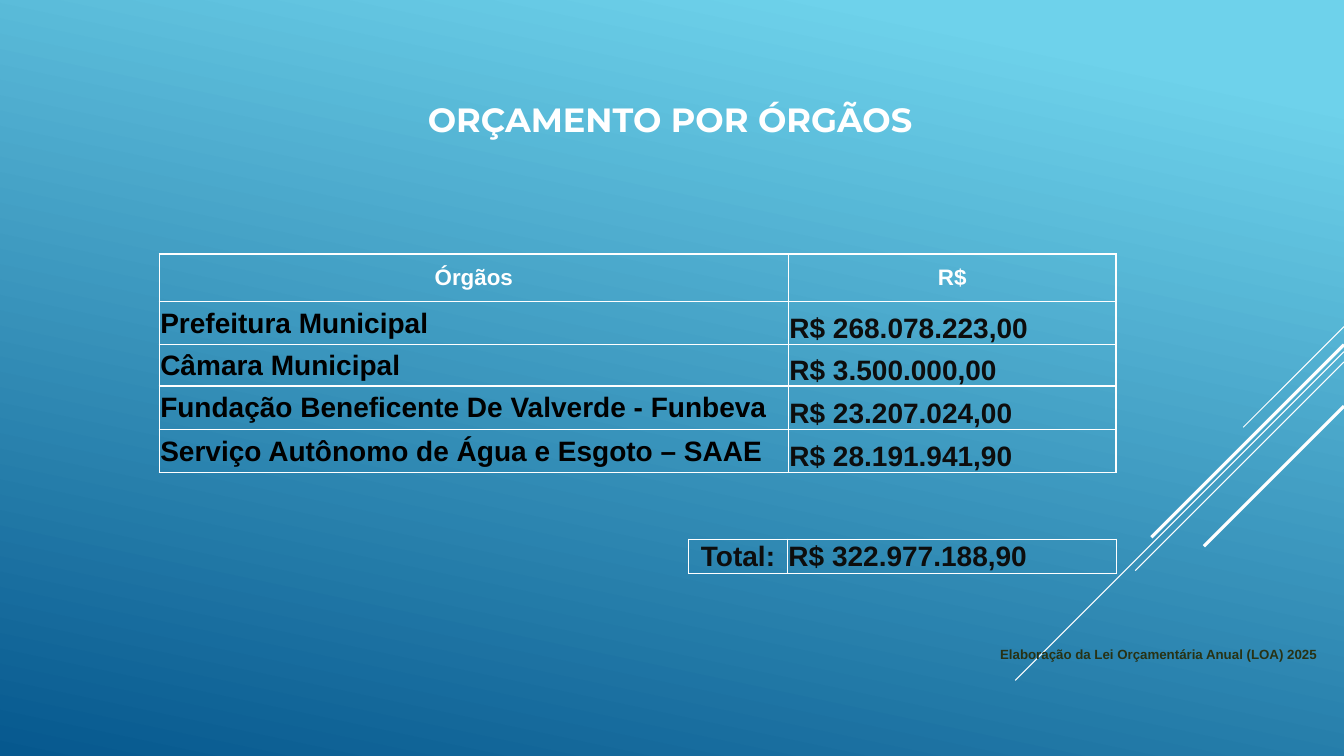
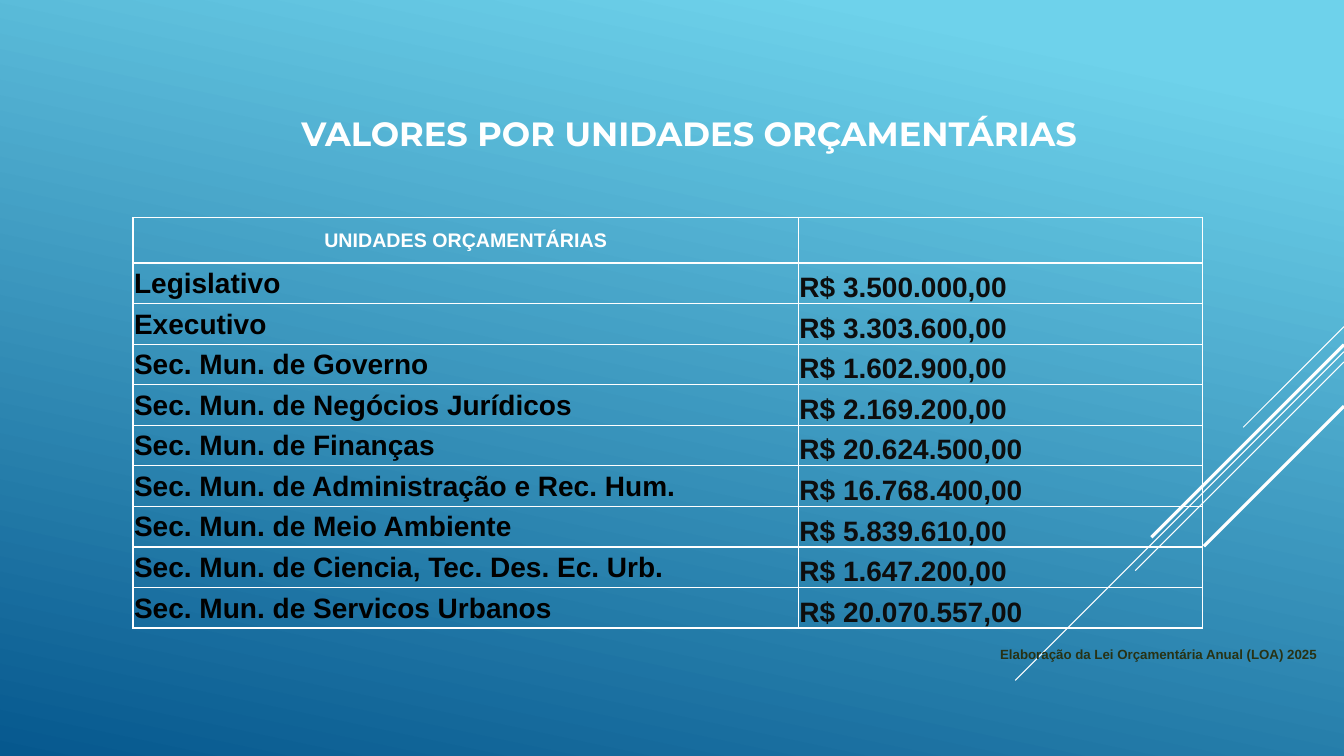
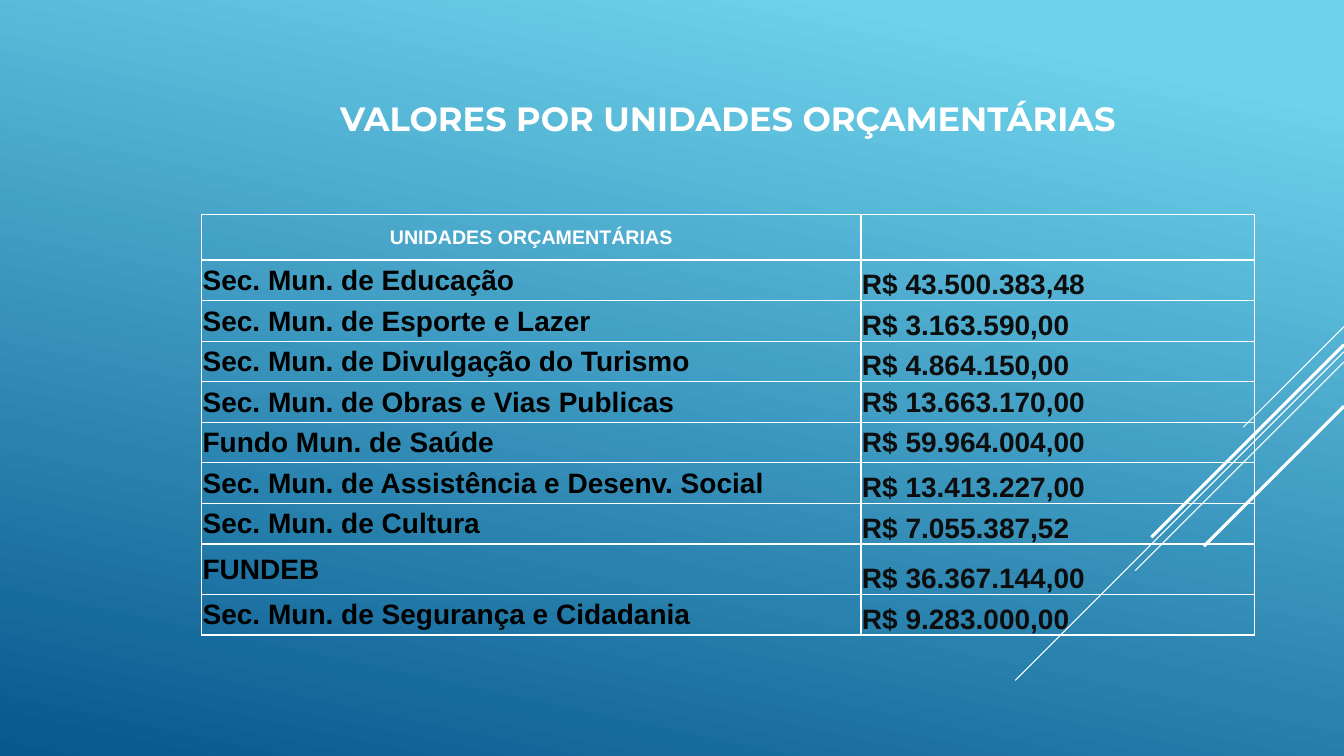
from lxml.etree import SubElement as Sub
from pptx import Presentation as Deck
from pptx.dml.color import RGBColor as Rgb
from pptx.enum.shapes import MSO_CONNECTOR as Link
from pptx.enum.text import MSO_ANCHOR as Anchor, PP_ALIGN as Align
from pptx.oxml.ns import qn
from pptx.util import Inches, Pt

WIDE, HIGH = Inches(13.33), Inches(7.5)
WHITE, BLACK, INK, OLIVE = "FFFFFF", "000000", "0D0D0D", "283214"
SKY, NAVY = "6ED2EB", "06588E"
MID, LOW = Anchor.MIDDLE, Anchor.BOTTOM

TITLE = dict(size=24, name="Montserrat", hue=WHITE, align=Align.CENTER, anchor=MID)
FOOT = dict(size=9.5, name="Arial", hue=OLIVE, align=Align.RIGHT, anchor=Anchor.TOP)
HEAD = dict(size=16, name="Arial", hue=WHITE, align=Align.CENTER, anchor=MID)
LABEL = dict(HEAD, size=20, hue=BLACK, align=Align.LEFT)
VALUE = dict(LABEL, hue=INK, anchor=LOW)
LEVEL = dict(VALUE, anchor=MID)
TOTAL = dict(LEVEL, align=Align.CENTER)
SMALL = dict(HEAD, size=14)

RAYS = [(43.2, 13.33, 0.75), (46.53, 43.47, 0.75), (47.87, 27.6, 0.75),
        (45.6, 25.47, 2.25), (53.73, 18.53, 2.25)]
UNITS = "VALORES POR UNIDADES ORÇAMENTÁRIAS"
UNIT_HEAD = [("UNIDADES ORÇAMENTÁRIAS", SMALL), ("", SMALL)]
ROW = 5.37

BODIES = [
    ("Prefeitura Municipal", "R$ 268.078.223,00"),
    ("Câmara Municipal", "R$ 3.500.000,00"),
    ("Fundação Beneficente De Valverde - Funbeva", "R$ 23.207.024,00"),
    ("Serviço Autônomo de Água e Esgoto – SAAE", "R$ 28.191.941,90"),
]
FIRST = [
    ("Legislativo", "R$ 3.500.000,00"),
    ("Executivo", "R$ 3.303.600,00"),
    ("Sec. Mun. de Governo", "R$ 1.602.900,00"),
    ("Sec. Mun. de Negócios Jurídicos", "R$ 2.169.200,00"),
    ("Sec. Mun. de Finanças", "R$ 20.624.500,00"),
    ("Sec. Mun. de Administração e Rec. Hum.", "R$ 16.768.400,00"),
    ("Sec. Mun. de Meio Ambiente", "R$ 5.839.610,00"),
    ("Sec. Mun. de Ciencia, Tec. Des. Ec. Urb.", "R$ 1.647.200,00"),
    ("Sec. Mun. de Servicos Urbanos", "R$ 20.070.557,00"),
]
SECOND = [
    ("Sec. Mun. de Educação", "R$ 43.500.383,48"),
    ("Sec. Mun. de Esporte e Lazer", "R$ 3.163.590,00"),
    ("Sec. Mun. de Divulgação do Turismo", "R$ 4.864.150,00"),
    ("Sec. Mun. de Obras e Vias Publicas", "R$ 13.663.170,00", LEVEL),
    ("Fundo Mun. de Saúde", "R$ 59.964.004,00", LEVEL),
    ("Sec. Mun. de Assistência e Desenv. Social", "R$ 13.413.227,00"),
    ("Sec. Mun. de Cultura", "R$ 7.055.387,52"),
    ("FUNDEB", "R$ 36.367.144,00"),
    ("Sec. Mun. de Segurança e Cidadania", "R$ 9.283.000,00"),
]


def across(share):
    """Turn a percentage of the slide's width into a length."""
    return round(WIDE * share / 100)


def down(share):
    """Turn a percentage of the slide's height into a length."""
    return round(HIGH * share / 100)


def paint(color, code):
    """Give a colour format its hex value."""
    color.rgb = Rgb.from_string(code)


def assign(item, values):
    """Set attributes from a dict."""
    for key, value in values.items():
        setattr(item, key, value)


def write(frame, text, look):
    """Put one styled paragraph in a text frame."""
    par = frame.paragraphs[0]
    par.alignment = look["align"]
    run = par.add_run()
    run.text = text
    assign(run.font, dict(size=Pt(look["size"]), name=look["name"], bold=True))
    paint(run.font.color, look["hue"])


def label(slide, text, box, look):
    """Add a text box placed by shares of the slide."""
    left, top, width, height = box
    shape = slide.shapes.add_textbox(across(left), down(top), across(width), down(height))
    assign(shape.text_frame, dict(word_wrap=True, vertical_anchor=look["anchor"]))
    write(shape.text_frame, text, look)


def ray(slide, top, drop, weight):
    """Draw a diagonal from the right edge down to the left."""
    line = slide.shapes.add_connector(
        Link.STRAIGHT, WIDE, down(top), WIDE - down(drop), down(top + drop))
    line.line.width = Pt(weight)
    paint(line.line.color, WHITE)
    Sub(line._element.spPr, qn("a:effectLst"))


def border(cell):
    """Outline a cell with thin white lines."""
    props = cell._tc.get_or_add_tcPr()
    for side in "LRTB":
        edge = Sub(props, qn(f"a:ln{side}"), w=str(Pt(1)))
        Sub(Sub(edge, qn("a:solidFill")), qn("a:srgbClr"), val=WHITE)


def fill_cell(cell, text, look):
    """Style one cell and write its text."""
    border(cell)
    cell.fill.background()
    thin = Inches(0.01)
    assign(cell, dict(margin_left=thin, margin_right=thin, margin_top=thin,
                      margin_bottom=0, vertical_anchor=look["anchor"]))
    if text:
        write(cell.text_frame, text, look)


def grid(slide, spot, cols, rows, cells):
    """Add a clear table with white rules."""
    left, top = spot
    table = slide.shapes.add_table(
        len(rows), len(cols), across(left), down(top),
        across(sum(cols)), down(sum(rows))).table
    assign(table, dict(first_row=False, horz_banding=False))
    for col, width in zip(table.columns, cols):
        col.width = across(width)
    for row, height, line in zip(table.rows, rows, cells):
        row.height = down(height)
        for cell, (text, look) in zip(row.cells, line):
            fill_cell(cell, text, look)


def body(pairs):
    """Pair each label and amount with its style."""
    return [[(name, LABEL), (sum_, *(look or [VALUE]))] for name, sum_, *look in pairs]


def backdrop(deck):
    """Give the master its sky gradient."""
    fill = deck.slide_master.background.fill
    fill.gradient()
    fill.gradient_angle = 258
    for stop, place, code in zip(fill.gradient_stops, (0.1, 1), (SKY, NAVY)):
        stop.position = place
        paint(stop.color, code)


def page(deck, title, box, foot=True):
    """Start a slide with rays, title and footer."""
    slide = deck.slides.add_slide(deck.slide_layouts[6])
    for spec in RAYS:
        ray(slide, *spec)
    label(slide, title, box, TITLE)
    if foot:
        label(slide, "Elaboração da Lei Orçamentária Anual (LOA) 2025",
              (65.04, 84.8, 33.68, 3.47), FOOT)
    return slide


def main():
    """Build and save the deck."""
    deck = Deck()
    assign(deck, dict(slide_width=WIDE, slide_height=HIGH))
    backdrop(deck)

    slide = page(deck, "ORÇAMENTO POR ÓRGÃOS", (5.63, 4.53, 88.45, 22.53))
    grid(slide, (11.85, 33.6), (46.81, 24.38), (6.27, 5.73, 5.47, 5.73, 5.73),
         [[("Órgãos", HEAD), ("R$", HEAD)]] + body(BODIES))
    grid(slide, (51.24, 71.33), (7.35, 24.46), (4.53,),
         [[("Total:", TOTAL), ("R$ 322.977.188,90", LEVEL)]])

    slide = page(deck, UNITS, (13.05, 9.47, 76.44, 16.27))
    grid(slide, (9.9, 28.8), (49.51, 30.08), [6] + [ROW] * 9,
         [UNIT_HEAD] + body(FIRST))

    slide = page(deck, UNITS, (15, 8.4, 78.32, 14.53), foot=False)
    grid(slide, (15, 28.4), (49.06, 29.26), [6] + [ROW] * 7 + [6.67, ROW],
         [UNIT_HEAD] + body(SECOND))

    deck.save("out.pptx")


if __name__ == "__main__":
    main()
